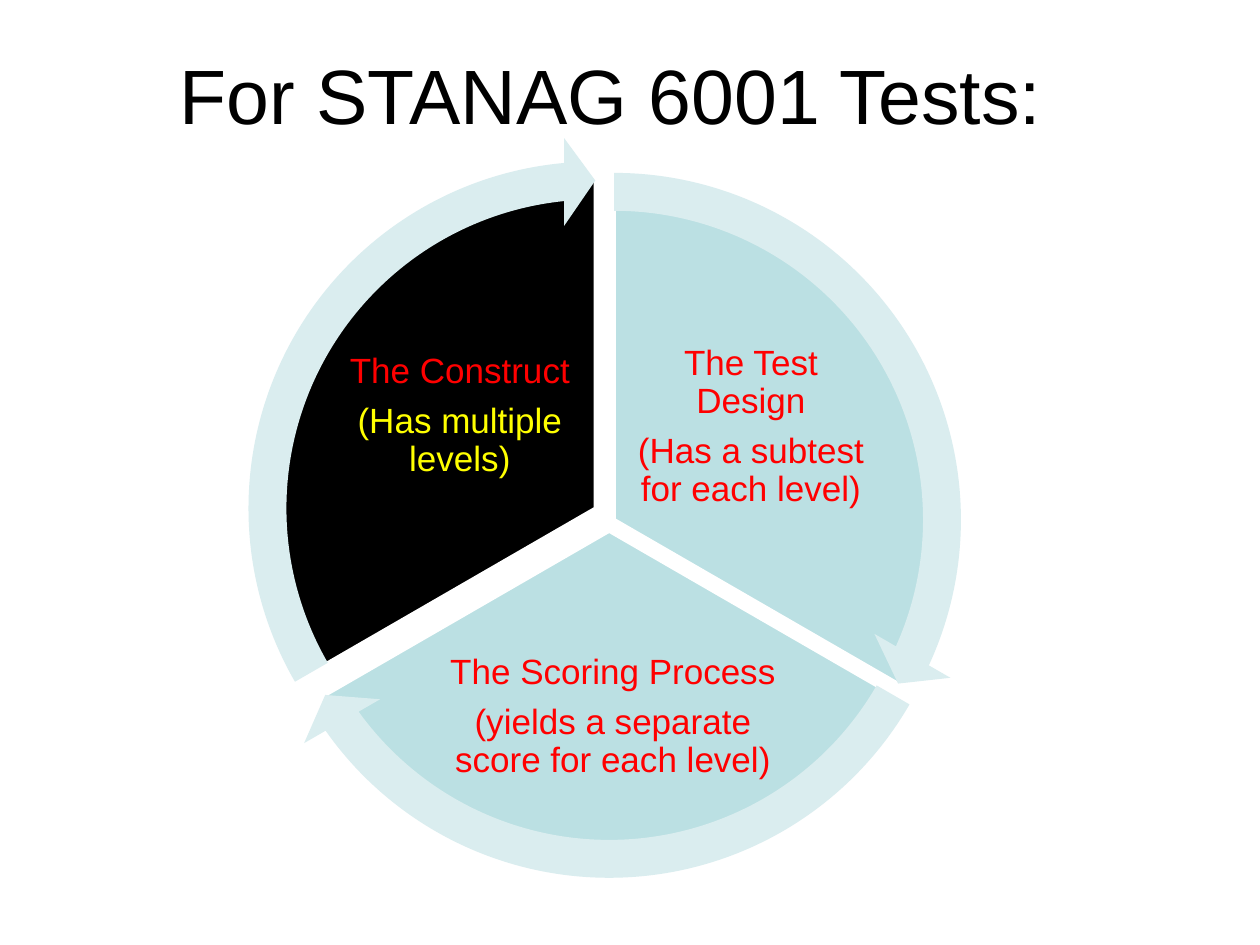
from dataclasses import dataclass

import pptx
import pptx.dml.color
import pptx.enum.shapes
import pptx.enum.text
import pptx.util
from pptx.util import Inches

MSO_SHAPE = pptx.enum.shapes.MSO_SHAPE


@dataclass(frozen=True)
class Theme:
    font: str = "Arial"
    title_size: int = 44
    label_size: int = 20
    black: str = "000000"
    white: str = "FFFFFF"
    teal: str = "BBE0E3"
    pale_teal: str = "DAEDEF"
    red: str = "FF0000"
    yellow: str = "FFFF00"


@dataclass(frozen=True)
class Sector:
    """Offsets are in inches from the wheel box; angles in units of 100000/60000 degree."""
    pie_offset: tuple
    start: int
    end: int
    fill: str
    label_box: tuple
    lines: tuple


THEME = Theme()
PIE_SIZE = 5.25
ARROW_SIZE = 5.9
ARROW_MARGIN = (ARROW_SIZE - PIE_SIZE) / 2
BAND_WIDTH, HEAD_ANGLE, HEAD_WIDTH = 0.051, 3.275, 0.059

SECTORS = [
    Sector((0.48, 0.42), 162, 18, THEME.teal, (3.25, 1.53, 1.88, 1.56),
           (("The Test Design", THEME.red),
            ("(Has a subtest for each level)", THEME.red))),
    Sector((0.44, 0.51), 18, 90, THEME.teal, (1.69, 3.92, 2.81, 1.38),
           (("The Scoring Process", THEME.red),
            ("(yields a separate score for each level)", THEME.red))),
    Sector((0.33, 0.33), 90, 162, THEME.black, (0.94, 1.44, 1.88, 1.56),
           (("The Construct", THEME.red),
            ("(Has multiple levels)", THEME.yellow))),
]


def rgb(color):
    return pptx.dml.color.RGBColor.from_string(color)


def style_font(paragraph, size, color):
    for run in paragraph.runs:
        run.font.name = THEME.font
        run.font.size = pptx.util.Pt(size)
        run.font.color.rgb = rgb(color)


def add_round_shape(slide, kind, left, top, size, fill, adjustments):
    shape = slide.shapes.add_shape(
        kind, Inches(left), Inches(top), Inches(size), Inches(size))
    shape.shadow.inherit = False
    shape.fill.solid()
    shape.fill.fore_color.rgb = rgb(fill)
    shape.line.fill.background()
    for index, value in enumerate(adjustments):
        shape.adjustments[index] = value
    return shape


def add_pie(slide, left, top, sector):
    pie = add_round_shape(slide, MSO_SHAPE.PIE, left + sector.pie_offset[0],
                          top + sector.pie_offset[1], PIE_SIZE, sector.fill,
                          (sector.start, sector.end))
    pie.line.color.rgb = rgb(THEME.white)
    pie.line.width = pptx.util.Pt(2)


def add_label(slide, left, top, sector):
    x, y, width, height = sector.label_box
    label = slide.shapes.add_textbox(
        Inches(left + x), Inches(top + y), Inches(width), Inches(height))
    frame = label.text_frame
    frame.text = "\n".join(text for text, color in sector.lines)
    frame.word_wrap = True
    frame.vertical_anchor = pptx.enum.text.MSO_ANCHOR.MIDDLE
    frame.margin_left = frame.margin_right = Inches(0.03)
    frame.margin_top = frame.margin_bottom = Inches(0.03)
    for paragraph, (text, color) in zip(frame.paragraphs, sector.lines):
        paragraph.alignment = pptx.enum.text.PP_ALIGN.CENTER
        paragraph.line_spacing = 0.9
        paragraph.space_after = pptx.util.Pt(0.35 * THEME.label_size)
        style_font(paragraph, THEME.label_size, color)


def add_arrow(slide, left, top, sector):
    """Draw the arrow concentric with the sector, its tip at the sector's end."""
    add_round_shape(slide, MSO_SHAPE.CIRCULAR_ARROW,
                    left + sector.pie_offset[0] - ARROW_MARGIN,
                    top + sector.pie_offset[1] - ARROW_MARGIN,
                    ARROW_SIZE, THEME.pale_teal,
                    (BAND_WIDTH, HEAD_ANGLE, sector.end - HEAD_ANGLE,
                     sector.start, HEAD_WIDTH))


def add_wheel(slide, left, top):
    for sector in SECTORS:
        add_pie(slide, left, top, sector)
        add_label(slide, left, top, sector)
    for sector in SECTORS:
        add_arrow(slide, left, top, sector)


def add_title(slide, left, top, width, height):
    title = slide.shapes.add_textbox(
        Inches(left), Inches(top), Inches(width), Inches(height))
    frame = title.text_frame
    frame.text = "For STANAG 6001 Tests:"
    frame.word_wrap = True
    frame.auto_size = pptx.enum.text.MSO_AUTO_SIZE.SHAPE_TO_FIT_TEXT
    style_font(frame.paragraphs[0], THEME.title_size, THEME.black)


def main():
    presentation = pptx.Presentation()
    presentation.slide_width = Inches(10)
    presentation.slide_height = Inches(7.5)
    slide = presentation.slides.add_slide(presentation.slide_layouts[6])
    add_wheel(slide, 1.77, 1.08)
    add_title(slide, 1.33, 0.33, 7.25, 0.84)
    presentation.save("out.pptx")


if __name__ == "__main__":
    main()
